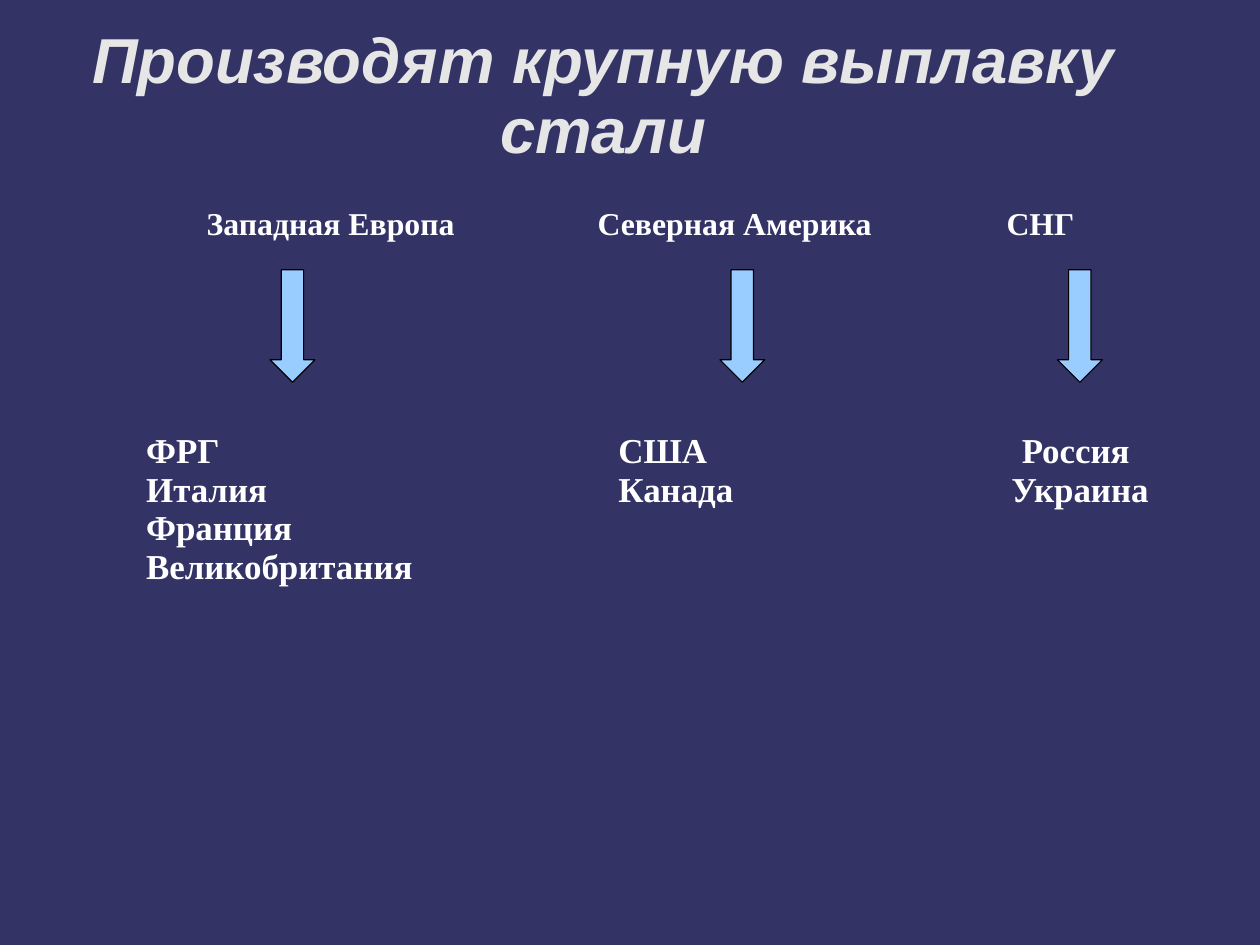
import pptx
import pptx.dml.color
import pptx.enum.shapes
import pptx.enum.text
import pptx.util

Pt = pptx.util.Pt
ALIGN = pptx.enum.text.PP_ALIGN

REGIONS = [
    dict(name="Западная Европа", center=208.3, arrow_left=170.1, list_left=85, list_width=212.6,
         countries=["ФРГ", "Италия", "Франция", "Великобритания"]),
    dict(name="Северная Америка", center=462.8, arrow_left=453.5, list_left=382.5,
         list_width=141.7, countries=["США", "Канада"]),
    dict(name="СНГ", center=655.4, arrow_left=666.1, list_left=595.3, list_width=170,
         countries=["Россия ", "Украина"], align=ALIGN.CENTER),
]


def color(value):
    """Return the colour for a hex string."""
    return pptx.dml.color.RGBColor.from_string(value)


def add_text(page, lines, left, top, width, height, size=22, font="Times New Roman",
             fill="FFFFFF", italic=False, align=ALIGN.LEFT, inset=7.2, inset_top=3.6,
             inset_bottom=3.6, anchor=pptx.enum.text.MSO_ANCHOR.TOP):
    """Add a bold text box with one paragraph for each line."""
    box = page.shapes.add_textbox(Pt(left), Pt(top), Pt(width), Pt(height))
    frame = box.text_frame
    frame.word_wrap = True
    frame.vertical_anchor = anchor
    frame.margin_left = frame.margin_right = Pt(inset)
    frame.margin_top = Pt(inset_top)
    frame.margin_bottom = Pt(inset_bottom)
    for index, line in enumerate(lines):
        para = frame.paragraphs[0] if index == 0 else frame.add_paragraph()
        para.alignment = align
        para.line_spacing = 0.92
        span = para.add_run()
        span.text = line
        span.font.name = font
        span.font.size = Pt(size)
        span.font.bold = True
        span.font.italic = italic
        span.font.color.rgb = color(fill)


def add_title(page, left, top, width, height):
    """Place the slide title in the given box."""
    add_text(page, ["Производят крупную выплавку стали"], left, top, width, height,
             size=40, font="Arial", fill="E6E6E6", italic=True, align=ALIGN.CENTER,
             inset=0, inset_top=5, inset_bottom=0,
             anchor=pptx.enum.text.MSO_ANCHOR.MIDDLE)


def add_region(page, top, name, center, arrow_left, list_left, list_width, countries,
               align=ALIGN.LEFT):
    """Place a region heading, its arrow and its list of countries below the given top."""
    heading_width = 220
    add_text(page, [name], center - heading_width / 2, top, heading_width, 30,
             size=20, align=ALIGN.CENTER)
    arrow = page.shapes.add_shape(pptx.enum.shapes.MSO_SHAPE.DOWN_ARROW,
                                  Pt(arrow_left), Pt(top + 42.6), Pt(28.3), Pt(70.8))
    arrow.shadow.inherit = False
    arrow.fill.solid()
    arrow.fill.fore_color.rgb = color("99CCFF")
    arrow.line.color.rgb = color("000000")
    arrow.line.width = Pt(0.75)
    add_text(page, countries, list_left, top + 141.6, list_width,
             8 + 25 * len(countries), align=align)


def main():
    """Build the deck and save it."""
    deck = pptx.Presentation()
    deck.slide_width = pptx.util.Cm(28)
    deck.slide_height = pptx.util.Cm(21)
    page = deck.slides.add_slide(deck.slide_layouts[6])
    page.background.fill.solid()
    page.background.fill.fore_color.rgb = color("333366")
    add_title(page, 41.2, 12.2, 677.5, 93)
    for region in REGIONS:
        add_region(page, 127.4, **region)
    deck.save("out.pptx")


if __name__ == "__main__":
    main()
